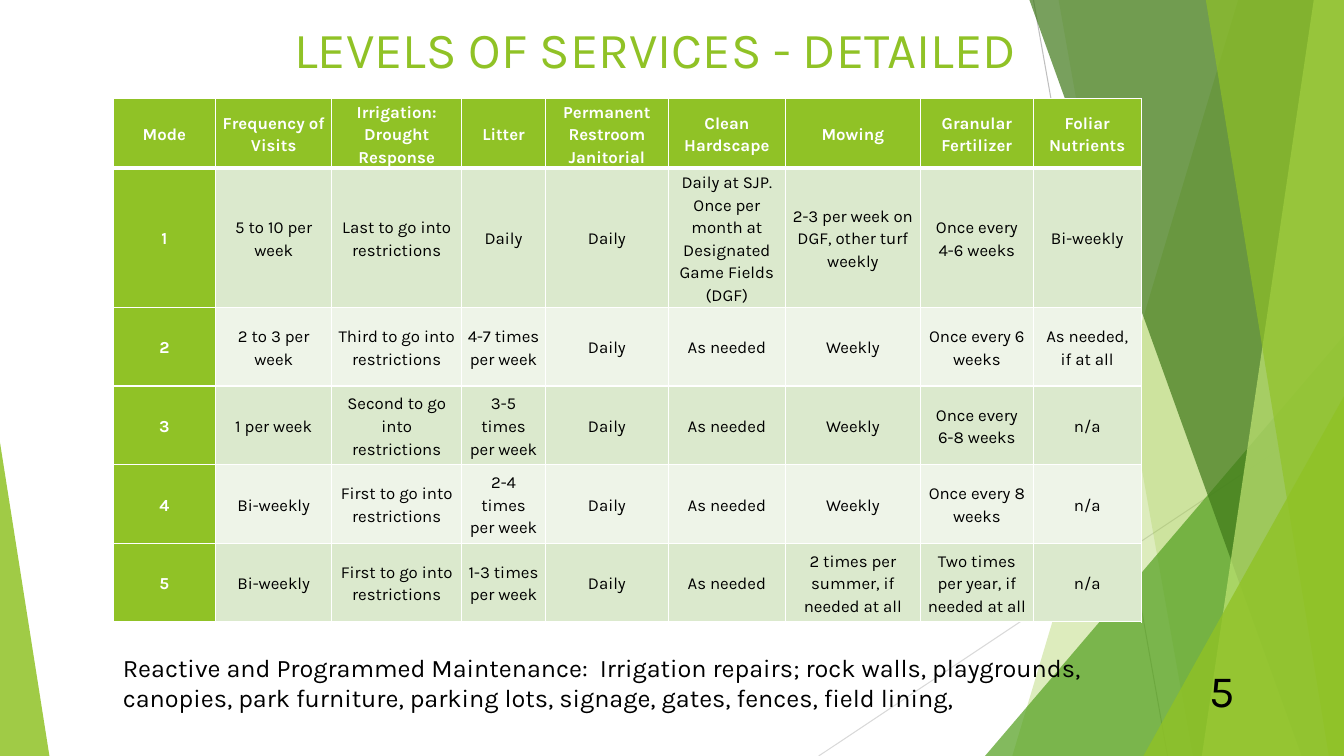
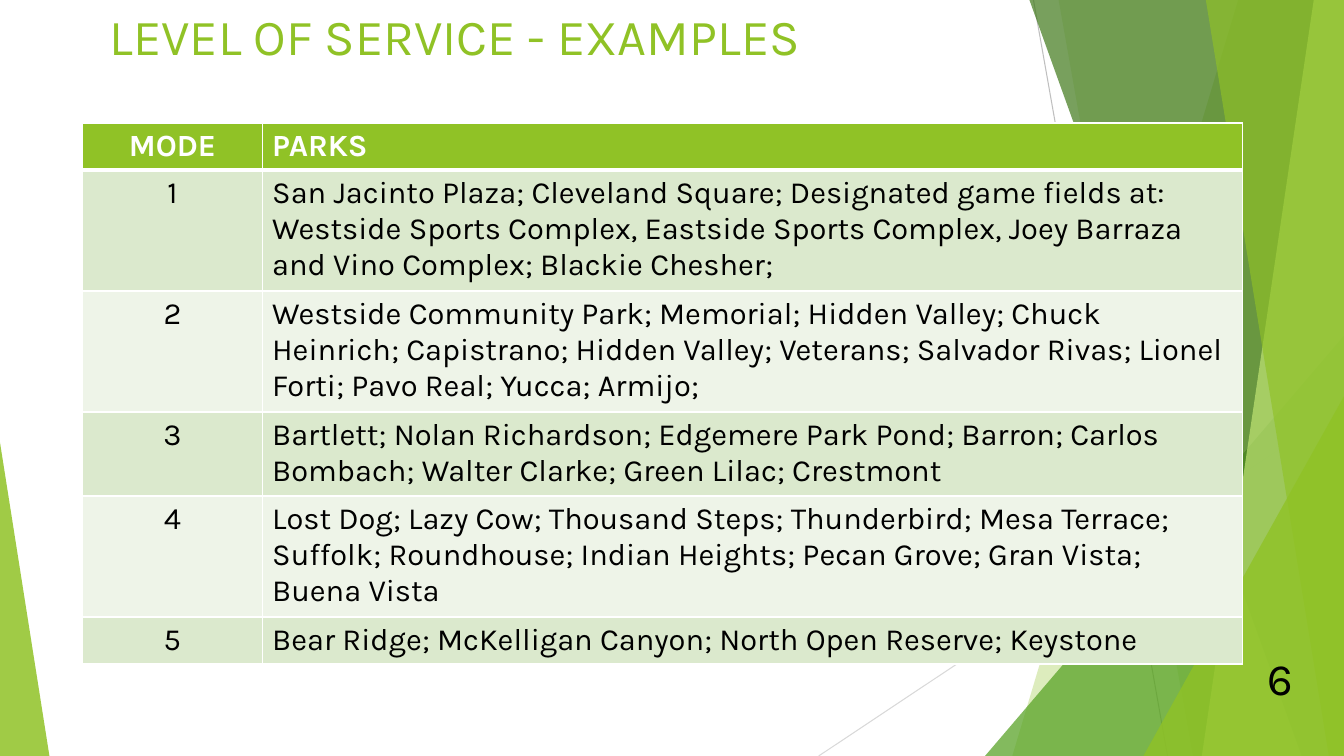
"""Build two slides on park maintenance levels of service."""
from dataclasses import dataclass

from lxml import etree
from pptx import Presentation
from pptx import util as u
from pptx.dml.color import RGBColor
from pptx.enum import shapes, text
from pptx.oxml import ns

PX = 9144
WIDTH, HEIGHT = 1333, 750
LEFT, CENTER, RIGHT = text.PP_ALIGN.LEFT, text.PP_ALIGN.CENTER, text.PP_ALIGN.RIGHT


@dataclass(frozen=True)
class Theme:
    font: str = "Karla"
    accent: str = "90C226"
    leaf: str = "54A021"
    forest: str = "3F7819"
    lime: str = "C0E474"
    white: str = "FFFFFF"
    ink: str = "000000"
    bands: tuple = ("DBE9CD", "EEF4E8")
    title: int = 36
    number: int = 32
    note: int = 18
    rule: float = 1
    header_rule: float = 3


THEME = Theme()

GUIDES = [(1025, 0, 1158, 750, "BFBFBF"), (1333, 403, 812, 750, "D9D9D9")]
FACET, TRIANGLE = "facet", "triangle"
DECOR = [
    (FACET, (1228, 1004), THEME.accent, 30),
    (FACET, (1050, 1183), THEME.accent, 20),
    (TRIANGLE, (977, 333, 356, 1), THEME.leaf, 72),
    (FACET, (1021, 1291), THEME.forest, 70),
    (FACET, (1303, 1192), THEME.lime, 70),
    (FACET, (1196, 1318), THEME.accent, 65),
    (TRIANGLE, (1134, 393, 199, 1), THEME.accent, 80),
    (TRIANGLE, (0, 439, 49, 0), THEME.accent, 85),
]

SERVICES = [
    ("Mode", "Frequency of Visits", "Irrigation: Drought Response", "Litter",
     "Permanent Restroom Janitorial", "Clean Hardscape", "Mowing",
     "Granular Fertilizer", "Foliar Nutrients"),
    ("1", "5 to 10 per week", "Last to go into restrictions", "Daily", "Daily",
     "Daily at SJP. Once per month at Designated Game Fields (DGF)",
     "2-3 per week on DGF, other turf weekly", "Once every 4-6 weeks", "Bi-weekly"),
    ("2", "2 to 3 per week", "Third to go into restrictions", "4-7 times per week",
     "Daily", "As needed", "Weekly", "Once every 6 weeks", "As needed, if at all"),
    ("3", "1 per week", "Second to go into restrictions", "3-5 times per week",
     "Daily", "As needed", "Weekly", "Once every 6-8 weeks", "n/a"),
    ("4", "Bi-weekly", "First to go into restrictions", "2-4 times per week",
     "Daily", "As needed", "Weekly", "Once every 8 weeks", "n/a"),
    ("5", "Bi-weekly", "First to go into restrictions", "1-3 times per week",
     "Daily", "As needed", "2 times per summer, if needed at all",
     "Two times per year, if needed at all", "n/a"),
]
PARKS = [
    ("MODE", "PARKS"),
    ("1", "San Jacinto Plaza; Cleveland Square; Designated game fields at:\n"
          "Westside Sports Complex, Eastside Sports Complex, Joey Barraza and Vino "
          "Complex; Blackie Chesher;"),
    ("2", "Westside Community Park; Memorial; Hidden Valley; Chuck Heinrich; "
          "Capistrano; Hidden Valley; Veterans; Salvador Rivas; Lionel Forti; "
          "Pavo Real; Yucca; Armijo;"),
    ("3", "Bartlett; Nolan Richardson; Edgemere Park Pond; Barron; Carlos Bombach; "
          "Walter Clarke; Green Lilac; Crestmont"),
    ("4", "Lost Dog; Lazy Cow; Thousand Steps; Thunderbird; Mesa Terrace; Suffolk; "
          "Roundhouse; Indian Heights; Pecan Grove; Gran Vista; Buena Vista"),
    ("5", "Bear Ridge; McKelligan Canyon; North Open Reserve; Keystone"),
]
NOTE = ("Reactive and Programmed Maintenance:  Irrigation repairs; rock walls, "
        "playgrounds, canopies, park furniture, parking lots, signage, gates, fences, "
        "field lining,")

SLIDES = [
    {
        "title": ("LEVELS OF SERVICES - DETAILED", (75, 13, 1150, 85), CENTER),
        "table": {
            "rows": SERVICES, "at": (112, 98), "size": 12, "spacing": 1.15,
            "widths": (102, 115, 129, 83, 122, 116, 134, 112, 107),
            "heights": (67, 134, 78, 78, 78, 78), "aligns": (CENTER,) * 9,
            "margins": (6, 0), "anchor": text.MSO_ANCHOR.MIDDLE, "mode_accent": True,
        },
        "note": (NOTE, (112, 642, 1076, 71)),
        "number": ("5", (1027, 653, 208, 50)),
    },
    {
        "title": ("LEVEL OF SERVICE - EXAMPLES", (99, 0, 1150, 145), LEFT),
        "table": {
            "rows": PARKS, "at": (82, 122), "size": 22, "spacing": 1.0,
            "widths": (178, 972), "heights": (46, 117, 117, 81, 117, 46),
            "aligns": (CENTER, LEFT), "margins": (10, 5),
            "anchor": text.MSO_ANCHOR.TOP, "mode_accent": False,
        },
        "number": ("6", (1084, 641, 208, 50)),
    },
]


def emu(*lengths):
    return [u.Emu(length * PX) for length in lengths]


def rgb(color):
    return RGBColor.from_string(color)


def write(frame, words, size, color, align, bold=False, spacing=1.0):
    frame.text = words
    frame.word_wrap = True
    for para in frame.paragraphs:
        para.alignment = align
        para.line_spacing = spacing
        for span in para.runs:
            span.font.name = THEME.font
            span.font.size = u.Pt(size)
            span.font.bold = bold
            span.font.color.rgb = rgb(color)


def add_text(page, words, at, size, color, align=LEFT):
    box = page.shapes.add_textbox(*emu(*at))
    write(box.text_frame, words, size, color, align)


def add_facet(page, top_x, bottom_x):
    builder = page.shapes.build_freeform(*emu(top_x, 0))
    corners = [(WIDTH, 0), (WIDTH, HEIGHT), (bottom_x, HEIGHT)]
    builder.add_line_segments([emu(*corner) for corner in corners], close=True)
    return builder.convert_to_shape()


def add_triangle(page, left, top, width, apex):
    shape = page.shapes.add_shape(
        shapes.MSO_SHAPE.ISOSCELES_TRIANGLE, *emu(left, top, width, HEIGHT - top))
    shape.adjustments[0] = apex
    return shape


def add_decor(page):
    for *ends, color in GUIDES:
        guide = page.shapes.add_connector(shapes.MSO_CONNECTOR.STRAIGHT, *emu(*ends))
        guide.line.color.rgb = rgb(color)
        guide.line.width = u.Pt(0.75)
        etree.SubElement(guide.element.spPr, ns.qn("a:effectLst"))
    makers = {FACET: add_facet, TRIANGLE: add_triangle}
    for kind, geometry, color, opacity in DECOR:
        shape = makers[kind](page, *geometry)
        shape.shadow.inherit = False
        shape.fill.solid()
        shape.fill.fore_color.rgb = rgb(color)
        shape.line.fill.background()
        fill_color = next(shape.element.iter(ns.qn("a:srgbClr")))
        etree.SubElement(fill_color, ns.qn("a:alpha"), val=str(opacity * 1000))


def set_borders(cell, row):
    sides = {"lnL": THEME.rule, "lnR": THEME.rule,
             "lnT": THEME.header_rule if row == 1 else THEME.rule,
             "lnB": THEME.header_rule if row == 0 else THEME.rule}
    properties = cell._tc.get_or_add_tcPr()
    for index, (side, points) in enumerate(sides.items()):
        line = etree.Element(ns.qn(f"a:{side}"), w=str(u.Pt(points)))
        fill = etree.SubElement(line, ns.qn("a:solidFill"))
        etree.SubElement(fill, ns.qn("a:srgbClr"), val=THEME.white)
        properties.insert(index, line)


def add_grid(page, grid):
    rows, widths, heights = grid["rows"], grid["widths"], grid["heights"]
    table = page.shapes.add_table(
        len(rows), len(widths), *emu(*grid["at"], sum(widths), sum(heights))).table
    table.horz_banding = False
    for column, width in zip(table.columns, emu(*widths)):
        column.width = width
    for line, height in zip(table.rows, emu(*heights)):
        line.height = height
    side, edge = emu(*grid["margins"])
    for row, entries in enumerate(rows):
        for col, words in enumerate(entries):
            cell = table.cell(row, col)
            strong = row == 0 or (col == 0 and grid["mode_accent"])
            cell.margin_left = cell.margin_right = side
            cell.margin_top = cell.margin_bottom = edge
            cell.vertical_anchor = grid["anchor"]
            cell.fill.solid()
            cell.fill.fore_color.rgb = rgb(
                THEME.accent if strong else THEME.bands[(row - 1) % 2])
            write(cell.text_frame, words, grid["size"],
                  THEME.white if strong else THEME.ink,
                  grid["aligns"][col], strong, grid["spacing"])
            set_borders(cell, row)


def main():
    deck = Presentation()
    deck.slide_width, deck.slide_height = emu(WIDTH, HEIGHT)
    for content in SLIDES:
        page = deck.slides.add_slide(deck.slide_layouts[6])
        add_decor(page)
        words, at, align = content["title"]
        add_text(page, words, at, THEME.title, THEME.accent, align)
        add_grid(page, content["table"])
        if "note" in content:
            add_text(page, *content["note"], THEME.note, THEME.ink)
        add_text(page, *content["number"], THEME.number, THEME.ink, RIGHT)
    deck.save("out.pptx")


if __name__ == "__main__":
    main()
